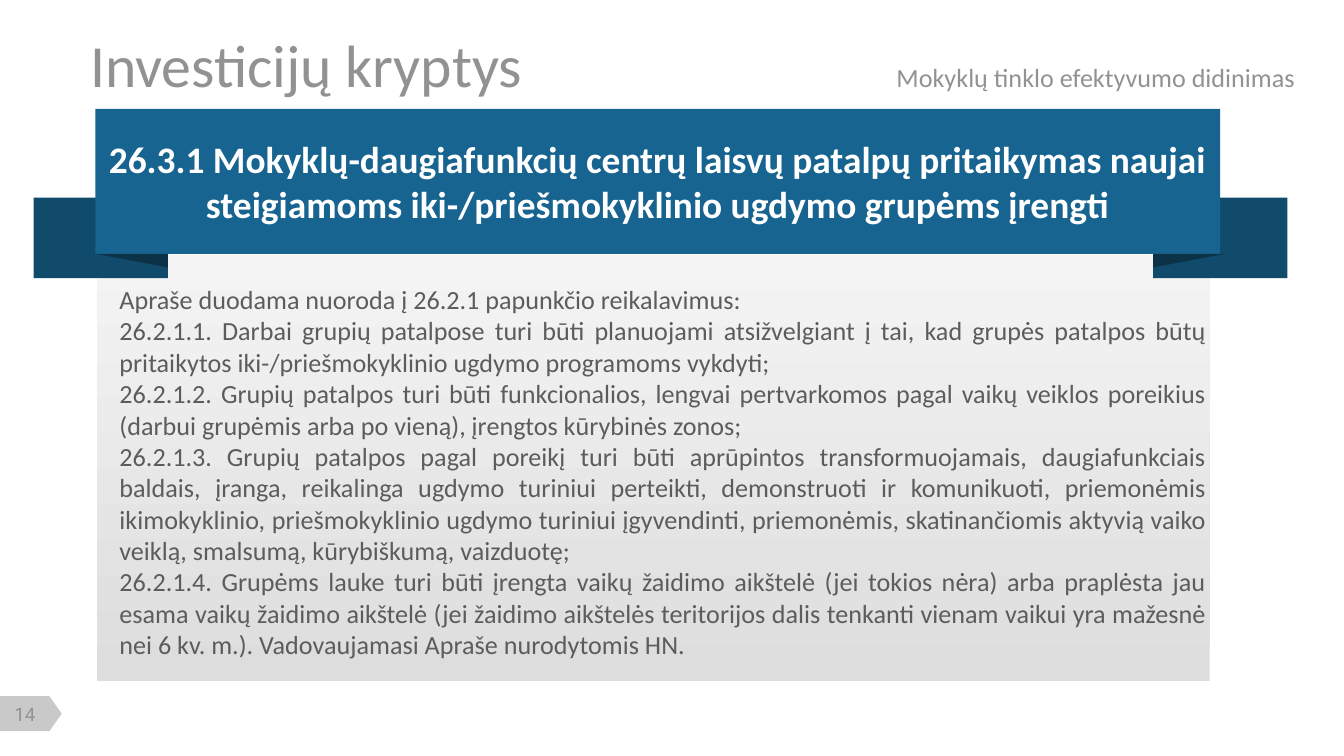
from dataclasses import dataclass

from lxml.etree import SubElement
from pptx import Presentation
from pptx.dml.color import RGBColor
from pptx.enum.shapes import MSO_SHAPE as Shape
from pptx.enum.text import MSO_ANCHOR as Anchor, PP_ALIGN as Align
from pptx.oxml.ns import qn
from pptx.util import Inches, Pt


@dataclass(frozen=True)
class Theme:
    font: str = "Calibri"
    number_font: str = "Roboto"
    heading: str = "929292"
    body: str = "5C5C5C"
    white: str = "FFFFFF"
    tag: str = "C9C9C9"
    panel_bottom: str = "DDDDDD"
    panel_top: str = "F4F4F4"
    banner: str = "176490"
    tail: str = "114B6C"
    fold: str = "0C3248"
    title_size: int = 32
    banner_size: int = 20
    body_size: int = 14
    number_size: int = 10


THEME = Theme()

TITLE = "Investicijų kryptys"
SUBTITLE = "Mokyklų tinklo efektyvumo didinimas"
BANNER = (
    "26.3.1 Mokyklų-daugiafunkcių centrų laisvų patalpų pritaikymas naujai "
    "steigiamoms iki-/priešmokyklinio ugdymo grupėms įrengti"
)
REQUIREMENTS = [
    "Apraše duodama nuoroda į 26.2.1 papunkčio reikalavimus:",
    "26.2.1.1. Darbai grupių patalpose turi būti planuojami atsižvelgiant į tai, "
    "kad grupės patalpos būtų pritaikytos iki-/priešmokyklinio ugdymo programoms vykdyti;",
    "26.2.1.2. Grupių patalpos turi būti funkcionalios, lengvai pertvarkomos pagal vaikų "
    "veiklos poreikius (darbui grupėmis arba po vieną), įrengtos kūrybinės zonos;",
    "26.2.1.3. Grupių patalpos pagal poreikį turi būti aprūpintos transformuojamais, "
    "daugiafunkciais baldais, įranga, reikalinga ugdymo turiniui perteikti, demonstruoti ir "
    "komunikuoti, priemonėmis ikimokyklinio, priešmokyklinio ugdymo turiniui įgyvendinti, "
    "priemonėmis, skatinančiomis aktyvią vaiko veiklą, smalsumą, kūrybiškumą, vaizduotę;",
    "26.2.1.4. Grupėms lauke turi būti įrengta vaikų žaidimo aikštelė (jei tokios nėra) arba "
    "praplėsta jau esama vaikų žaidimo aikštelė (jei žaidimo aikštelės teritorijos dalis "
    "tenkanti vienam vaikui yra mažesnė nei 6 kv. m.). Vadovaujamasi Apraše nurodytomis HN.",
]


def paint(shape, color):
    shape.shadow.inherit = False
    shape.line.fill.background()
    shape.fill.solid()
    shape.fill.fore_color.rgb = RGBColor.from_string(color)
    return shape


def add_block(slide, box, color, kind=Shape.RECTANGLE):
    return paint(slide.shapes.add_shape(kind, *map(Inches, box)), color)


def add_textbox(slide, box):
    return slide.shapes.add_textbox(*map(Inches, box))


def add_run(paragraph, text, size, color, font=THEME.font, bold=False):
    run = paragraph.add_run()
    run.text = text
    run.font.name = font
    run.font.size = Pt(size)
    run.font.bold = bold
    run.font.color.rgb = RGBColor.from_string(color)


def write(shape, paragraphs, align=Align.LEFT, anchor=Anchor.TOP, margins=None, **style):
    """Fill a shape with paragraphs; margins are left, top, right, bottom in inches."""
    frame = shape.text_frame
    frame.word_wrap = True
    frame.vertical_anchor = anchor
    if margins:
        (frame.margin_left, frame.margin_top,
         frame.margin_right, frame.margin_bottom) = map(Inches, margins)
    for index, text in enumerate(paragraphs):
        paragraph = frame.add_paragraph() if index else frame.paragraphs[0]
        paragraph.alignment = align
        add_run(paragraph, text, **style)
    return frame


def add_tab_stop(paragraph, position):
    tabs = SubElement(paragraph._p.get_or_add_pPr(), qn("a:tabLst"))
    SubElement(tabs, qn("a:tab"), pos=str(Inches(position)), algn="l")


def add_title(slide):
    frame = write(add_textbox(slide, (0.67, 0.28, 9.15, 0.39)), [TITLE + "\t"],
                  anchor=Anchor.MIDDLE, margins=(0, 0.05, 0.1, 0.05),
                  size=THEME.title_size, color=THEME.heading)
    heading = frame.paragraphs[0]
    add_tab_stop(heading, 6)
    add_run(heading, SUBTITLE, THEME.body_size, THEME.heading)


def add_panel(slide):
    panel = add_block(slide, (0.72, 1.9, 8.28, 3.17), THEME.panel_top)
    panel.fill.gradient()
    panel.fill.gradient_angle = 90
    for stop, color in zip(panel.fill.gradient_stops,
                           (THEME.panel_bottom, THEME.panel_top)):
        stop.color.rgb = RGBColor.from_string(color)


def add_fold(slide, outer, inner, top):
    """Draw the dark triangle where the ribbon turns behind the banner."""
    builder = slide.shapes.build_freeform(Inches(outer), Inches(top))
    corners = [(inner, top), (inner, top + 0.1)]
    builder.add_line_segments([(Inches(x), Inches(y)) for x, y in corners], close=True)
    paint(builder.convert_to_shape(), THEME.fold)


def add_ribbon(slide):
    tail_width, fold_width, banner_bottom = 1, 0.53, 1.89
    left_tail, right_tail = 0.25, 8.58
    for left in (left_tail, right_tail):
        add_block(slide, (left, 1.47, tail_width, 0.6), THEME.tail)
    banner = add_block(slide, (0.71, 0.81, 8.37, 1.08), THEME.banner)
    write(banner, [BANNER], align=Align.CENTER, anchor=Anchor.MIDDLE,
          size=THEME.banner_size, color=THEME.white, bold=True)
    for inner, direction in ((left_tail + tail_width, -1), (right_tail, 1)):
        add_fold(slide, inner + direction * fold_width, inner, banner_bottom)


def add_page_number(slide, number):
    tag = add_block(slide, (0.1, 5.08, 0.26, 0.46), THEME.tag,
                    Shape.FLOWCHART_OFFPAGE_CONNECTOR)
    tag.rotation = 270
    write(add_textbox(slide, (0.02, 5.23, 0.33, 0.17)), [number],
          align=Align.CENTER, anchor=Anchor.MIDDLE, margins=(0, 0, 0, 0),
          size=THEME.number_size, color=THEME.heading, font=THEME.number_font)


def main():
    deck = Presentation()
    deck.slide_width = Inches(10)
    deck.slide_height = Inches(10 * 9 / 16)
    slide = deck.slides.add_slide(deck.slide_layouts[6])
    add_page_number(slide, "14")
    add_panel(slide)
    add_title(slide)
    add_ribbon(slide)
    write(add_textbox(slide, (0.79, 2.06, 8.29, 2.93)), REQUIREMENTS,
          align=Align.JUSTIFY, size=THEME.body_size, color=THEME.body)
    deck.save("out.pptx")


if __name__ == "__main__":
    main()
